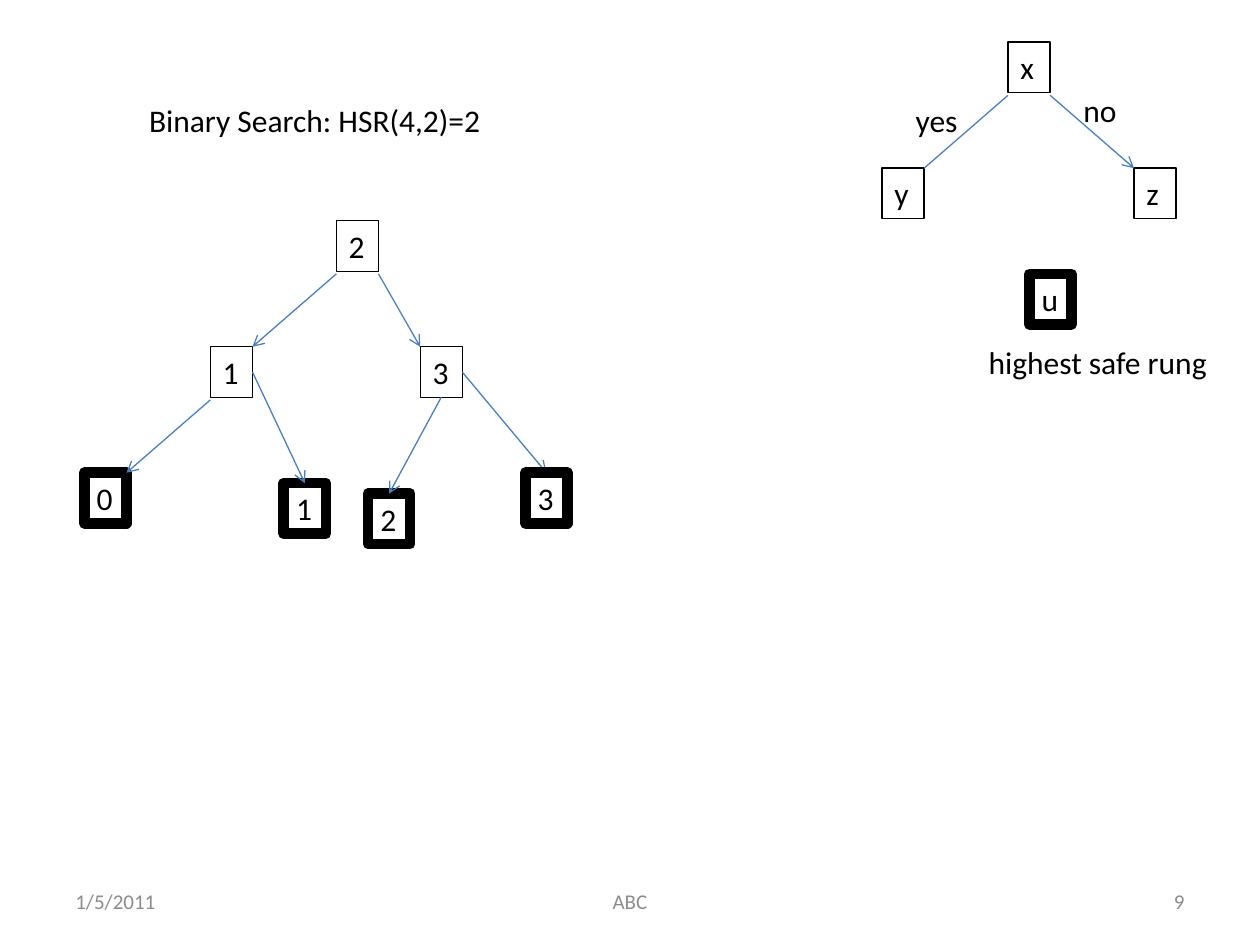
import pptx
import pptx.dml.color
import pptx.enum.shapes
import pptx.enum.text
import pptx.oxml
import pptx.oxml.ns
import pptx.util

Cm, Pt = pptx.util.Cm, pptx.util.Pt
ALIGN = pptx.enum.text.PP_ALIGN
ANCHOR = pptx.enum.text.MSO_ANCHOR
BLACK, BLUE, GREY = "000000", "4B7EBC", "8C8C8C"
NODE_W, NODE_H = 0.85, 1.02
THIN, THICK, HAIR = 0.75, 6, 0.25

# Attachment points as fractions of a node: side numbers and corner names
POINTS = {0: (0.5, 0), 1: (0, 0.5), 2: (0.5, 1), 3: (1, 0.5),
          "tl": (0, 0), "tr": (1, 0), "bl": (0, 1.05), "br": (1, 1.05)}


def rgb(color):
    return pptx.dml.color.RGBColor.from_string(color)


def write(s, text, size=18, color=BLACK, align=ALIGN.LEFT,
          anchor=ANCHOR.TOP, wrap=False):
    tf = s.text_frame
    tf.word_wrap = wrap
    tf.vertical_anchor = anchor
    tf.auto_size = pptx.enum.text.MSO_AUTO_SIZE.NONE
    p = tf.paragraphs[0]
    p.alignment = align
    r = p.add_run()
    r.text = text
    r.font.name, r.font.size = "Calibri", Pt(size)
    r.font.color.rgb = rgb(color)


def add_label(slide, x, y, w, text, **fmt):
    s = slide.shapes.add_textbox(Cm(x), Cm(y), Cm(w), Cm(NODE_H))
    write(s, text, **fmt)


def add_node(slide, x, y, text, line=THIN):
    s = slide.shapes.add_shape(pptx.enum.shapes.MSO_SHAPE.RECTANGLE,
                               Cm(x), Cm(y), Cm(NODE_W), Cm(NODE_H))
    s.shadow.inherit = False
    s.fill.background()
    s.line.color.rgb = rgb(BLACK)
    s.line.width = Pt(line)
    write(s, text)
    return s


def add_edge(slide, start, start_at, end, end_at, arrow=True):
    ends = []
    for node, at in ((start, start_at), (end, end_at)):
        fx, fy = POINTS[at]
        ends += [int(node.left + fx * node.width),
                 int(node.top + fy * node.height)]
    c = slide.shapes.add_connector(
        pptx.enum.shapes.MSO_CONNECTOR.STRAIGHT, *ends)
    # Only side midpoints are connection sites
    if start_at in range(4):
        c.begin_connect(start, start_at)
    if end_at in range(4):
        c.end_connect(end, end_at)
    c.line.color.rgb = rgb(BLUE)
    c.line.width = Pt(THIN)
    if arrow:
        ln = c.line._get_or_add_ln()
        ln.append(pptx.oxml.parse_xml(
            '<a:tailEnd %s type="arrow"/>' % pptx.oxml.ns.nsdecls("a")))
    c._element.spPr.append(pptx.oxml.parse_xml(
        "<a:effectLst %s/>" % pptx.oxml.ns.nsdecls("a")))


def add_title(slide, x, y, w, h):
    s = slide.shapes.title
    s.left, s.top, s.width, s.height = Cm(x), Cm(y), Cm(w), Cm(h)
    write(s, "Binary Search: HSR(4,2)=2")


def add_search_tree(slide, x, y):
    nodes = {name: add_node(slide, x + dx, y + dy, text, line)
             for name, dx, dy, text, line in (
                 ("root", 5.08, 0, "2", THIN),
                 ("left", 2.54, 2.54, "1", THIN),
                 ("right", 6.77, 2.54, "3", HAIR),
                 ("leaf 0", 0, 5.08, "0", THICK),
                 ("leaf 1", 4.02, 5.29, "1", THICK),
                 ("leaf 2", 5.72, 5.5, "2", THICK),
                 ("leaf 3", 8.89, 5.08, "3", THICK))}
    for start, start_at, end, end_at in (
            ("root", "bl", "left", "tr"), ("root", "br", "right", "tl"),
            ("left", "bl", "leaf 0", "tr"), ("left", 3, "leaf 1", 0),
            ("right", 2, "leaf 2", 0), ("right", 3, "leaf 3", 0)):
        add_edge(slide, nodes[start], start_at, nodes[end], end_at)
    # The last leaf covers its arrowhead
    leaf = nodes["leaf 3"].element
    leaf.getparent().append(leaf)


def add_legend(slide, x, y):
    parent = add_node(slide, x + 2.54, y, "x")
    yes = add_node(slide, x, y + 2.54, "y")
    no = add_node(slide, x + 5.08, y + 2.54, "z")
    add_edge(slide, parent, "bl", yes, "tr", arrow=False)
    add_edge(slide, parent, "br", no, "tl")
    add_label(slide, x + 0.43, y + 1.07, 1.5, "yes")
    add_label(slide, x + 3.81, y + 0.86, 1.22, "no")
    add_node(slide, x + 2.97, y + 4.67, "u", THICK)
    add_label(slide, x + 1.9, y + 5.94, 5.44, "highest safe rung")


def add_footer(slide, x, y):
    for dx, w, text, align in ((0, 5.93, "1/5/2011", ALIGN.LEFT),
                               (7.41, 8.04, "ABC", ALIGN.CENTER),
                               (16.93, 5.93, "9", ALIGN.RIGHT)):
        add_label(slide, x + dx, y, w, text, size=12, color=GREY,
                  align=align, anchor=ANCHOR.MIDDLE, wrap=True)


def main():
    prs = pptx.Presentation()
    prs.slide_width, prs.slide_height = Cm(25.4), Cm(19.05)
    slide = prs.slides.add_slide(prs.slide_layouts[5])
    add_title(slide, 2.75, 1.9, 7.26, 1.8)
    add_search_tree(slide, 1.7, 4.45)
    add_legend(slide, 17.78, 0.85)
    add_footer(slide, 1.27, 17.65)
    prs.save("out.pptx")


if __name__ == "__main__":
    main()
